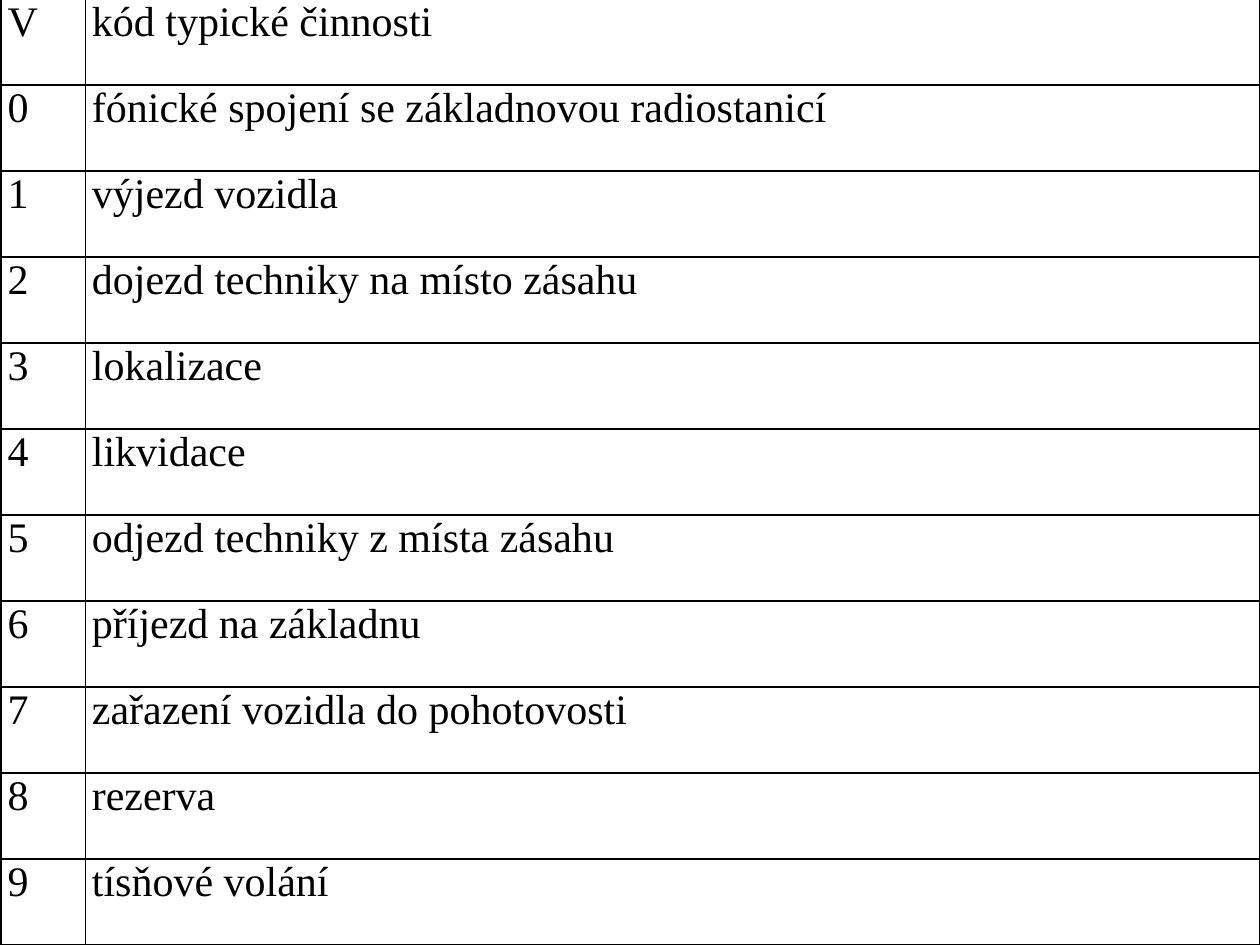
from pptx import Presentation
from pptx.dml.color import RGBColor
from pptx.oxml import parse_xml
from pptx.oxml.ns import nsdecls
from pptx.util import Inches, Pt

ACTIVITY_CODES = [
    ("V", "kód typické činnosti"),
    ("0", "fónické spojení se základnovou radiostanicí"),
    ("1", "výjezd vozidla"),
    ("2", "dojezd techniky na místo zásahu"),
    ("3", "lokalizace"),
    ("4", "likvidace"),
    ("5", "odjezd techniky z místa zásahu"),
    ("6", "příjezd na základnu"),
    ("7", "zařazení vozidla do pohotovosti"),
    ("8", "rezerva"),
    ("9", "tísňové volání"),
]
BLACK = RGBColor(0, 0, 0)
FONT = "Times New Roman"
LEFT, TOP, HEIGHT = 0.01, -0.01, 7.51
COLUMN_WIDTHS = (0.67, 9.32)


def add_borders(cell):
    properties = cell._tc.get_or_add_tcPr()
    for position, side in enumerate(("lnL", "lnR", "lnT", "lnB")):
        properties.insert(position, parse_xml(
            f'<a:{side} {nsdecls("a")} w="{Pt(1)}"><a:solidFill>'
            f'<a:srgbClr val="{BLACK}"/></a:solidFill></a:{side}>'))


def format_cell(cell, text):
    cell.text = text
    cell.margin_left = cell.margin_right = Inches(0.05)
    cell.margin_top = cell.margin_bottom = 0
    cell.fill.background()
    font = cell.text_frame.paragraphs[0].font
    font.name, font.size, font.bold = FONT, Pt(24), False
    font.color.rgb = BLACK
    add_borders(cell)


def main():
    """Build a slide with the table of typical activity codes."""
    presentation = Presentation()
    presentation.slide_width, presentation.slide_height = Inches(10), Inches(7.5)
    slide = presentation.slides.add_slide(presentation.slide_layouts[6])
    table = slide.shapes.add_table(
        len(ACTIVITY_CODES), len(COLUMN_WIDTHS), Inches(LEFT), Inches(TOP),
        Inches(sum(COLUMN_WIDTHS)), Inches(HEIGHT)).table
    table.first_row = table.horz_banding = False
    for column, width in zip(table.columns, COLUMN_WIDTHS):
        column.width = Inches(width)
    for row, texts in zip(table.rows, ACTIVITY_CODES):
        for cell, text in zip(row.cells, texts):
            format_cell(cell, text)
    presentation.save("out.pptx")


if __name__ == "__main__":
    main()
